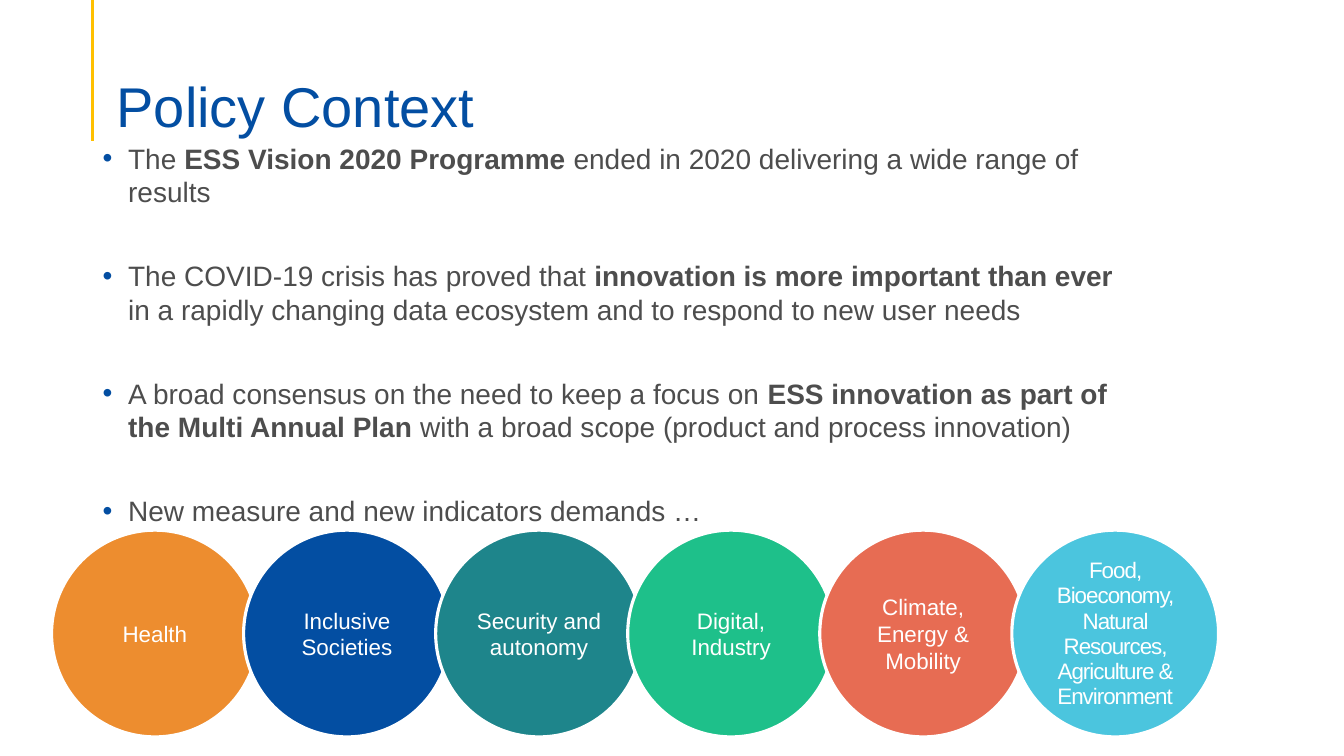
"""Build the Policy Context slide."""
from lxml.etree import SubElement
from pptx import Presentation
from pptx.dml.color import RGBColor
from pptx.enum.shapes import MSO_CONNECTOR, MSO_SHAPE
from pptx.enum.text import MSO_ANCHOR, PP_ALIGN
from pptx.oxml.ns import qn
from pptx.util import Cm, Pt

WHITE = RGBColor(0xFF, 0xFF, 0xFF)
BLUE = RGBColor(0x03, 0x4E, 0xA2)
GREY = RGBColor(0x4D, 0x4D, 0x4D)
YELLOW = RGBColor(0xFF, 0xC0, 0x00)
ORANGE = RGBColor(0xED, 0x8D, 0x2F)
TEAL = RGBColor(0x1E, 0x85, 0x8B)
GREEN = RGBColor(0x1E, 0xC0, 0x8A)
CORAL = RGBColor(0xE7, 0x6C, 0x53)
SKY = RGBColor(0x4B, 0xC5, 0xDE)

TITLE_FONT = {"name": "Arial", "size": Pt(40)}
BODY_FONT = {"name": "Arial", "size": Pt(20)}
CIRCLE_FONT = {"name": "Arial", "size": Pt(16)}
TITLE_FRAME = {"word_wrap": True, "vertical_anchor": MSO_ANCHOR.BOTTOM, "margin_bottom": 0}
BODY_FRAME = {"word_wrap": True}
CIRCLE_FRAME = {"word_wrap": True, "vertical_anchor": MSO_ANCHOR.MIDDLE,
                "margin_left": Cm(0.1), "margin_right": Cm(0.1)}

BULLETS = [
    [("The ", False), ("ESS Vision 2020 Programme ", True),
     ("ended in 2020 delivering a wide range of results", False)],
    [("The COVID-19 crisis has proved that ", False),
     ("innovation is more important than ever ", True),
     ("in a rapidly changing data ecosystem and to respond to new user needs", False)],
    [("A broad consensus on the need to keep a focus on ", False),
     ("ESS innovation as part of the Multi Annual Plan ", True),
     ("with a broad scope (product and process innovation)", False)],
    [("New measure and new indicators demands …", False)],
]
CIRCLES = [
    ("Health", ORANGE, {}, None),
    ("Inclusive Societies", BLUE, {}, None),
    ("Security and autonomy", TEAL, {}, None),
    ("Digital, Industry", GREEN, {}, None),
    ("Climate, Energy & Mobility", CORAL, {}, None),
    ("Food, Bioeconomy, Natural Resources, Agriculture & Environment", SKY,
     {"line_spacing": Pt(18)}, -70),
]


def apply(obj, values):
    """Set each attribute named in values on obj."""
    for name, value in values.items():
        setattr(obj, name, value)


def add_run(p, text, font, color, bold=False):
    """Append a formatted run to a paragraph."""
    r = p.add_run()
    r.text = text
    apply(r.font, {**font, "bold": bold})
    r.font.color.rgb = color
    return r


def add_bullet(p):
    """Give a paragraph a blue bullet with a hanging indent."""
    pPr = p._p.get_or_add_pPr()
    pPr.set("marL", str(Cm(0.64)))
    pPr.set("indent", str(-Cm(0.64)))
    color = SubElement(pPr, qn("a:buClr"))
    SubElement(color, qn("a:srgbClr")).set("val", str(BLUE))
    SubElement(pPr, qn("a:buFont")).set("typeface", "Arial")
    SubElement(pPr, qn("a:buChar")).set("char", "•")


def add_rule(s):
    """Draw the yellow vertical rule beside the title."""
    rule = s.shapes.add_connector(MSO_CONNECTOR.STRAIGHT, Cm(2.34), 0, Cm(2.34), Cm(3.56))
    rule.line.color.rgb = YELLOW
    rule.line.width = Pt(2.25)
    SubElement(rule._element.spPr, qn("a:effectLst"))


def add_title(s, text):
    """Add the slide title."""
    tf = s.shapes.add_textbox(Cm(2.69), Cm(1.35), Cm(29.21), Cm(2.18)).text_frame
    apply(tf, TITLE_FRAME)
    p = tf.paragraphs[0]
    p.line_spacing = 0.9
    add_run(p, text, TITLE_FONT, BLUE)


def add_circle(s, left, text, color, paragraph, spacing):
    """Add one policy circle with its label."""
    sp = s.shapes.add_shape(MSO_SHAPE.OVAL, left, Cm(13.36), Cm(5.21), Cm(5.21))
    sp.shadow.inherit = False
    sp.fill.solid()
    sp.fill.fore_color.rgb = color
    sp.line.color.rgb = WHITE
    sp.line.width = Pt(2.25)
    tf = sp.text_frame
    apply(tf, CIRCLE_FRAME)
    p = tf.paragraphs[0]
    apply(p, {"alignment": PP_ALIGN.CENTER, **paragraph})
    r = add_run(p, text, CIRCLE_FONT, WHITE)
    if spacing is not None:
        r._r.get_or_add_rPr().set("spc", str(spacing))


def add_body(s, bullets):
    """Add the bulleted statements."""
    tf = s.shapes.add_textbox(Cm(2.34), Cm(3.43), Cm(26.44), Cm(12.67)).text_frame
    apply(tf, BODY_FRAME)
    for i, runs in enumerate(bullets):
        p = tf.add_paragraph() if i else tf.paragraphs[0]
        add_bullet(p)
        p.space_after = Pt(36)
        for text, bold in runs:
            add_run(p, text, BODY_FONT, GREY, bold)


def main():
    """Build and save the slide."""
    prs = Presentation()
    prs.slide_width, prs.slide_height = Cm(33.87), Cm(19.05)
    s = prs.slides.add_slide(prs.slide_layouts[6])
    add_rule(s)
    add_title(s, "Policy Context")
    for i, circle in enumerate(CIRCLES):
        add_circle(s, Cm(1.3 + 4.84 * i), *circle)
    add_body(s, BULLETS)
    prs.save("out.pptx")


if __name__ == "__main__":
    main()
